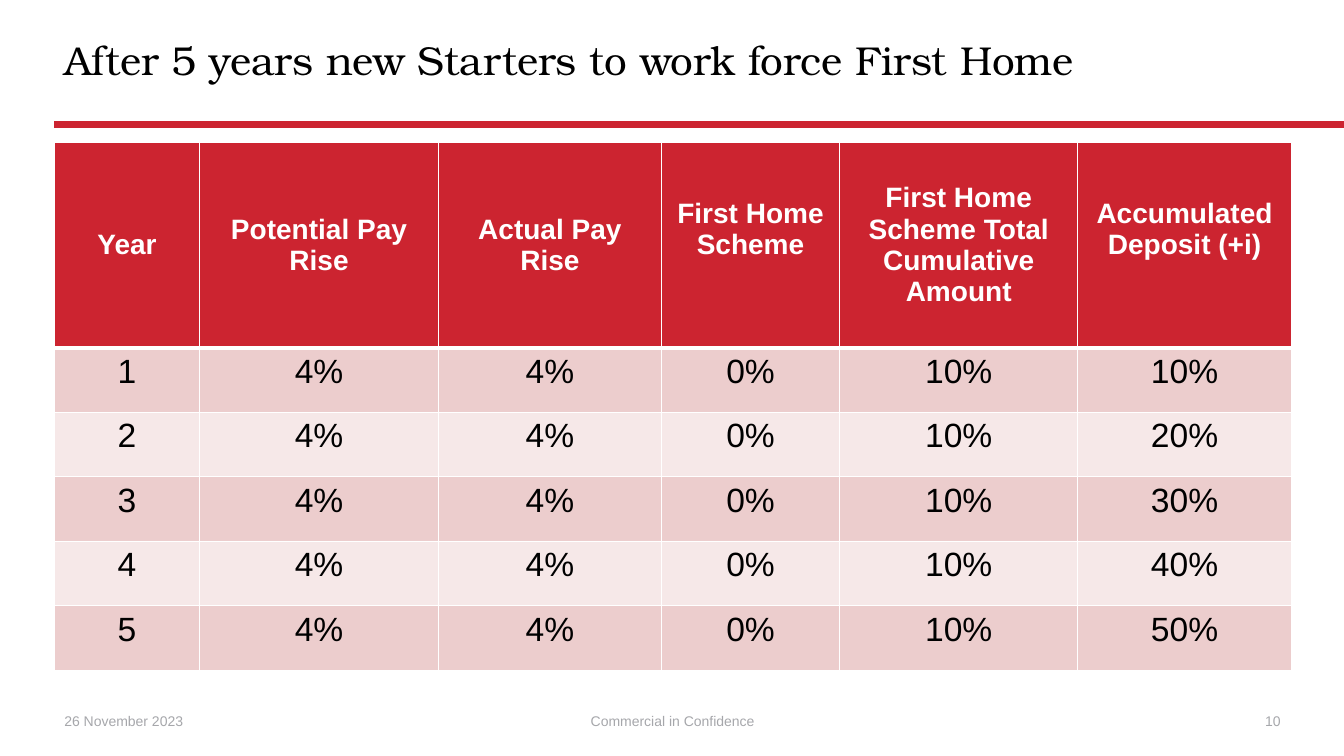
from lxml.etree import SubElement
from pptx import Presentation
from pptx.dml.color import RGBColor as Rgb
from pptx.enum.shapes import MSO_CONNECTOR as Conn
from pptx.enum.text import MSO_ANCHOR as Anchor, PP_ALIGN as Align
from pptx.oxml.ns import qn
from pptx.util import Inches, Pt

COLORS = {
    "red": "CC2430",
    "rose": "ECCDCD",
    "blush": "F6E8E8",
    "white": "FFFFFF",
    "black": "000000",
    "gray": "A6A7AB",
}
LEFT, WIDE = 0.54, 12.26
HEADS = [
    "Year",
    "Potential Pay Rise",
    "Actual Pay Rise",
    "First Home Scheme",
    "First Home Scheme Total Cumulative Amount",
    "Accumulated Deposit (+i)",
]
COLS = [1.44, 2.37, 2.21, 1.77, 2.36, 2.12]
RAISED = {3, 5}
YEARS = 5


def color(name):
    return Rgb.from_string(COLORS[name])


def write(frame, text, size=10, font="Arial", ink="gray", bold=False,
          align=Align.LEFT, space=None):
    para = frame.paragraphs[0]
    para.alignment = align
    para.line_spacing = space
    run = para.add_run()
    run.text = text
    run.font.size = Pt(size)
    run.font.name = font
    run.font.bold = bold
    run.font.color.rgb = color(ink)


def add_text(slide, text, x, y, w, h, anchor=Anchor.MIDDLE, **style):
    frame = slide.shapes.add_textbox(
        Inches(x), Inches(y), Inches(w), Inches(h)).text_frame
    frame.word_wrap = True
    frame.vertical_anchor = anchor
    if anchor == Anchor.TOP:
        frame.margin_top = 0
    write(frame, text, **style)


def add_rule(slide, x, y, end):
    line = slide.shapes.add_connector(
        Conn.STRAIGHT, Inches(x), Inches(y), Inches(end), Inches(y))
    line.line.color.rgb = color("red")
    line.line.width = Pt(5)
    SubElement(line._element.spPr, qn("a:effectLst"))


def set_edges(cell, top=1, base=1):
    props = cell._tc.get_or_add_tcPr()
    for side, width in (("L", 1), ("R", 1), ("T", top), ("B", base)):
        edge = SubElement(props, qn(f"a:ln{side}"), w=str(Pt(width)))
        fill = SubElement(edge, qn("a:solidFill"))
        SubElement(fill, qn("a:srgbClr"), val=COLORS["white"])


def fill_cell(cell, text, back, top=1, base=1, **style):
    set_edges(cell, top, base)
    cell.fill.solid()
    cell.fill.fore_color.rgb = color(back)
    write(cell.text_frame, text, align=Align.CENTER, **style)


def add_grid(slide):
    table = slide.shapes.add_table(
        YEARS + 1, len(HEADS), Inches(LEFT), Inches(1.41),
        Inches(WIDE), Inches(5.22)).table
    for col, width in zip(table.columns, COLS):
        col.width = Inches(width)
    for i, row in enumerate(table.rows):
        row.height = Inches(0.64 if i else 2.04)
    for j, head in enumerate(HEADS):
        cell = table.cell(0, j)
        fill_cell(cell, head, "red", base=3, size=20, ink="white", bold=True)
        cell.vertical_anchor = Anchor.MIDDLE
        if j in RAISED:
            cell.margin_bottom = Inches(0.36)
    for year in range(1, YEARS + 1):
        values = [str(year), "4%", "4%", "0%", "10%", f"{year * 10}%"]
        for j, value in enumerate(values):
            fill_cell(table.cell(year, j), value,
                      "rose" if year % 2 else "blush",
                      top=3 if year == 1 else 1, size=24, ink="black")


def main():
    deck = Presentation()
    deck.slide_width, deck.slide_height = Inches(13.33), Inches(7.5)
    slide = deck.slides.add_slide(deck.slide_layouts[6])
    add_rule(slide, LEFT, 1.24, 13.33)
    add_grid(slide)
    add_text(slide, "26 November 2023", LEFT, 6.95, 3, 0.4)
    add_text(slide, "Commercial in Confidence", 4.42, 6.95, 4.5, 0.4,
             align=Align.CENTER)
    add_text(slide, "10", 9.8, 6.95, 3, 0.4, align=Align.RIGHT)
    add_text(slide, "After 5 years new Starters to work force First Home",
             LEFT, 0.4, WIDE, 0.84, anchor=Anchor.TOP, size=28.8,
             font="TeX Gyre Bonum", ink="black", space=0.9)
    deck.save("out.pptx")


if __name__ == "__main__":
    main()
